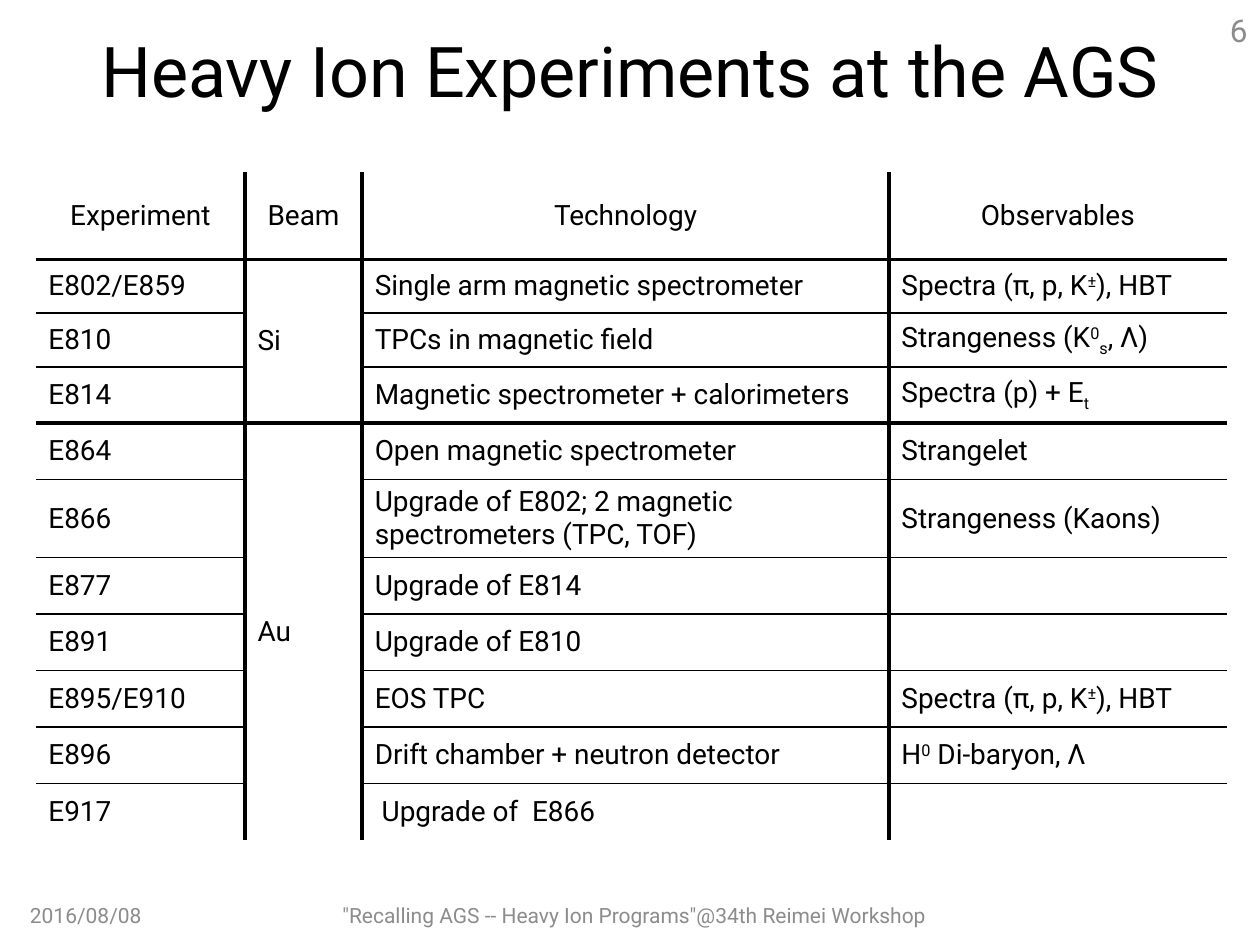
from typing import NamedTuple

from lxml.etree import SubElement
from pptx import Presentation
from pptx.dml.color import RGBColor
from pptx.enum.text import MSO_ANCHOR as Anchor, PP_ALIGN as Align
from pptx.oxml.ns import qn
from pptx.util import Pt

FONT = "Roboto"
COLORS = {"ink": "000000", "muted": "8C8C8C"}
PLAIN_STYLE = "{2D5ABB26-0587-4C30-8999-92F81FD0307C}"
THICK, THIN = 2.25, 1
BEAM_COLUMN = 1
GROUP_STARTS = (1, 4)


class Span(NamedTuple):
    text: str
    baseline: int = 0


class Label(NamedTuple):
    text: str
    left: float
    top: float
    width: float
    height: float
    size: float
    color: str
    align: Align


class Experiment(NamedTuple):
    name: str
    technology: str
    observables: tuple = ()
    beam: str = ""
    height: float = 32.3


LABELS = [
    Label("Heavy Ion Experiments at the AGS", 36, 3.6, 648, 72.7, 40, "ink", Align.CENTER),
    Label("2016/08/08", 10, 508.3, 80.6, 28.8, 12, "muted", Align.LEFT),
    Label('"Recalling AGS -- Heavy Ion Programs"@34th Reimei Workshop',
          101.5, 508.3, 522, 28.8, 12, "muted", Align.CENTER),
    Label("6", 664.6, 2.9, 55.4, 28.8, 18, "muted", Align.RIGHT),
]
HEADINGS = ("Experiment", "Beam", "Technology", "Observables")
HEADING_HEIGHT = 50
COLUMN_WIDTHS = (119.5, 67, 301, 193)
SPECTRA = (Span("Spectra (π, p, K"), Span("±", 30), Span("), HBT"))
EXPERIMENTS = [
    Experiment("E802/E859", "Single arm magnetic spectrometer", SPECTRA, "Si", 30.5),
    Experiment("E810", "TPCs in magnetic field",
               (Span("Strangeness (K"), Span("0", 30), Span("s", -25), Span(", Λ)")), height=31),
    Experiment("E814", "Magnetic spectrometer + calorimeters",
               (Span("Spectra (p) + E"), Span("t", -25)), height=32),
    Experiment("E864", "Open magnetic spectrometer", (Span("Strangelet"),), "Au"),
    Experiment("E866", "Upgrade of E802; 2 magnetic spectrometers (TPC, TOF)",
               (Span("Strangeness (Kaons)"),), height=44.6),
    Experiment("E877", "Upgrade of E814"),
    Experiment("E891", "Upgrade of E810"),
    Experiment("E895/E910", "EOS TPC", SPECTRA),
    Experiment("E896", "Drift chamber + neutron detector",
               (Span("H"), Span("0", 30), Span(" Di-baryon, Λ"))),
    Experiment("E917", " Upgrade of  E866"),
]


def write(para, spans: tuple, size: float, color: str, align: Align) -> None:
    para.alignment = align
    para.font.name = FONT
    para.font.size = Pt(size)
    para.font.color.rgb = RGBColor.from_string(COLORS[color])
    for span in spans:
        run = para.add_run()
        run.text = span.text
        if span.baseline:
            run._r.get_or_add_rPr().set("baseline", str(span.baseline * 1000))


def add_label(page, label: Label) -> None:
    box = page.shapes.add_textbox(Pt(label.left), Pt(label.top), Pt(label.width), Pt(label.height))
    frame = box.text_frame
    frame.word_wrap = True
    frame.vertical_anchor = Anchor.MIDDLE
    write(frame.paragraphs[0], (Span(label.text),), label.size, label.color, label.align)


def row_rule(edge: int, column: int, row_count: int) -> float:
    if edge in GROUP_STARTS:
        return THICK
    return THIN if 0 < edge < row_count and column != BEAM_COLUMN else 0


def add_borders(cell, row: int, column: int, row_count: int) -> None:
    widths = {
        "L": THICK if column > 0 else 0,
        "R": THICK if column < len(HEADINGS) - 1 else 0,
        "T": row_rule(row, column, row_count),
        "B": row_rule(row + 1, column, row_count),
    }
    properties = cell._tc.get_or_add_tcPr()
    for side, width in widths.items():
        if width:
            line = SubElement(properties, qn(f"a:ln{side}"), w=str(Pt(width)))
            fill = SubElement(line, qn("a:solidFill"))
            SubElement(fill, qn("a:srgbClr"), val=COLORS["ink"])


def add_experiment_table(page) -> None:
    heights = [HEADING_HEIGHT] + [item.height for item in EXPERIMENTS]
    contents = [[(Span(heading),) for heading in HEADINGS]]
    for item in EXPERIMENTS:
        beam = (Span(item.beam),) if item.beam else ()
        contents.append([(Span(item.name),), beam, (Span(item.technology),), item.observables])
    row_count = len(contents)
    frame = page.shapes.add_table(row_count, len(HEADINGS), Pt(20.5), Pt(98.3),
                                  Pt(sum(COLUMN_WIDTHS)), Pt(sum(heights)))
    table = frame.table
    table.first_row = table.horz_banding = False
    table._tbl.tblPr.find(qn("a:tableStyleId")).text = PLAIN_STYLE
    for column, width in zip(table.columns, COLUMN_WIDTHS):
        column.width = Pt(width)
    for row, height in zip(table.rows, heights):
        row.height = Pt(height)
    for row, values in enumerate(contents):
        for column, spans in enumerate(values):
            cell = table.cell(row, column)
            cell.vertical_anchor = Anchor.MIDDLE
            add_borders(cell, row, column, row_count)
            cell.fill.background()
            align = Align.LEFT if row else Align.CENTER
            write(cell.text_frame.paragraphs[0], spans, 16, "ink", align)
    for start, end in zip(GROUP_STARTS, GROUP_STARTS[1:] + (row_count,)):
        table.cell(start, BEAM_COLUMN).merge(table.cell(end - 1, BEAM_COLUMN))


def main() -> None:
    """Build the slide listing the AGS heavy ion experiments."""
    deck = Presentation()
    deck.slide_width, deck.slide_height = Pt(720), Pt(540)
    page = deck.slides.add_slide(deck.slide_layouts[6])
    add_experiment_table(page)
    for label in LABELS:
        add_label(page, label)
    deck.save("out.pptx")


if __name__ == "__main__":
    main()
